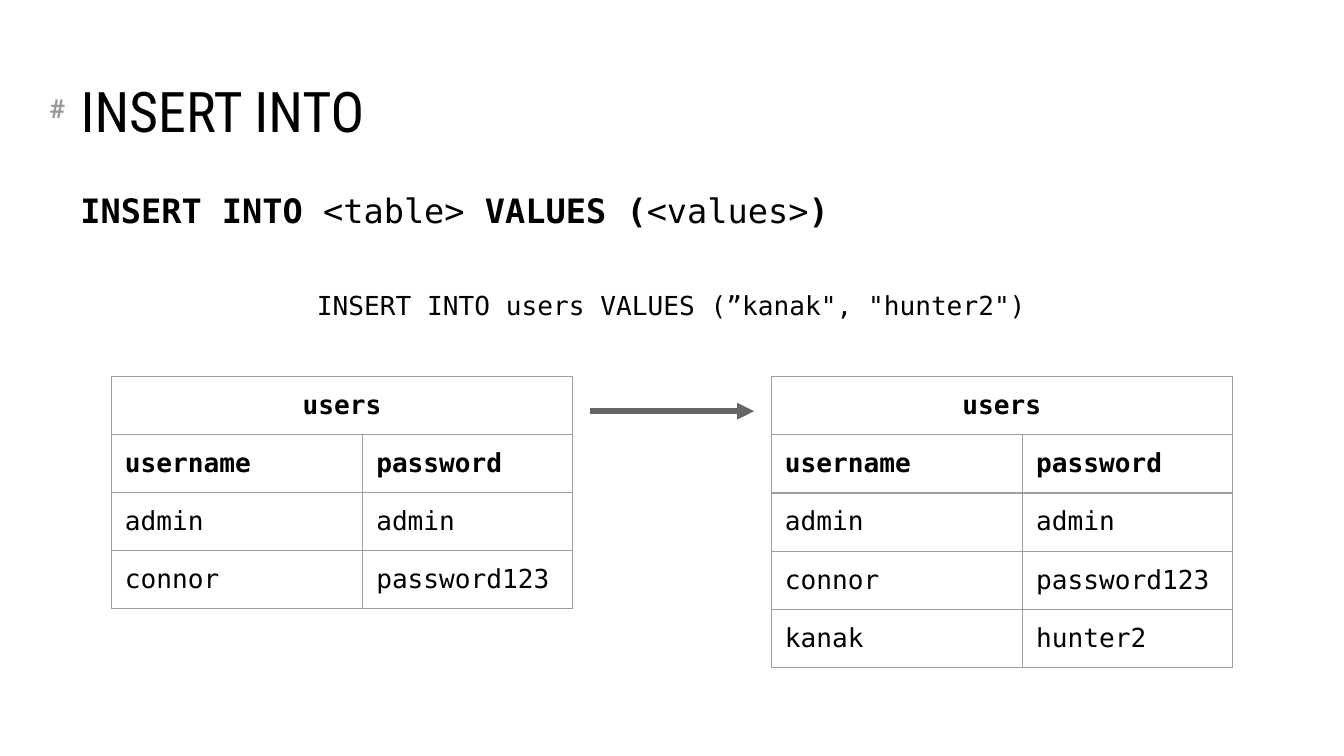
"""Builds a slide explaining the SQL INSERT INTO statement."""
from lxml.etree import SubElement
from pptx import Presentation
from pptx.dml.color import RGBColor
from pptx.enum.shapes import MSO_CONNECTOR
from pptx.enum.text import MSO_ANCHOR, MSO_AUTO_SIZE, PP_ALIGN
from pptx.oxml.ns import qn
from pptx.util import Inches, Pt

BLACK = RGBColor(0x00, 0x00, 0x00)
GRAY = RGBColor(0x99, 0x99, 0x99)
ARROW_GRAY = RGBColor(0x66, 0x66, 0x66)
BORDER_HEX = "9E9E9E"
MONO = "DejaVu Sans Mono"

TITLE = "INSERT INTO"
SYNTAX = [("INSERT INTO", True), (" <table> ", False), ("VALUES (", True),
          ("<values>", False), (")", True)]
EXAMPLE = "INSERT INTO users VALUES (”kanak\", \"hunter2\")"
TABLE_NAME = "users"
COLUMNS = ("username", "password")
ROWS_BEFORE = [("admin", "admin"), ("connor", "password123")]
ROWS_AFTER = ROWS_BEFORE + [("kanak", "hunter2")]

COLUMN_WIDTHS = (1.87, 1.56)
TABLE_TOP = 2.8
TABLES = [(0.83, 1.73, ROWS_BEFORE), (5.74, 2.17, ROWS_AFTER)]


def style(para, size, font=MONO, color=BLACK, bold=None, align=PP_ALIGN.LEFT):
    para.alignment = align
    para.font.name = font
    para.font.size = Pt(size)
    para.font.color.rgb = color
    para.font.bold = bold


def prepare(shape, anchor=MSO_ANCHOR.TOP):
    frame = shape.text_frame
    frame.word_wrap = True
    frame.auto_size = MSO_AUTO_SIZE.NONE
    frame.vertical_anchor = anchor
    frame.margin_left = frame.margin_right = Inches(0.1)
    frame.margin_top = frame.margin_bottom = Inches(0.1)
    return frame.paragraphs[0]


def add_text(page, left, top, width, height, spans):
    box = page.shapes.add_textbox(Inches(left), Inches(top), Inches(width), Inches(height))
    para = prepare(box)
    for text, bold in spans:
        span = para.add_run()
        span.text = text
        span.font.bold = bold
    return para


def add_borders(cell):
    properties = cell._tc.get_or_add_tcPr()
    for position, side in enumerate(("a:lnL", "a:lnR", "a:lnT", "a:lnB")):
        line = SubElement(properties, qn(side), w=str(Pt(0.75)))
        fill = SubElement(line, qn("a:solidFill"))
        SubElement(fill, qn("a:srgbClr"), val=BORDER_HEX)
        properties.insert(position, line)


def add_users_table(page, left, height, records):
    rows = [(TABLE_NAME, ""), COLUMNS] + records
    table = page.shapes.add_table(
        len(rows), len(COLUMNS), Inches(left), Inches(TABLE_TOP),
        Inches(sum(COLUMN_WIDTHS)), Inches(height)).table
    for column, width in zip(table.columns, COLUMN_WIDTHS):
        column.width = Inches(width)
    for r, values in enumerate(rows):
        for c, value in enumerate(values):
            cell = table.cell(r, c)
            cell.text = value
            cell.margin_left = cell.margin_right = Inches(0.1)
            cell.margin_top = cell.margin_bottom = Inches(0.1)
            cell.fill.background()
            add_borders(cell)
            style(cell.text_frame.paragraphs[0], 14, bold=r < 2,
                  align=PP_ALIGN.CENTER if r == 0 else PP_ALIGN.LEFT)
    table.cell(0, 0).merge(table.cell(0, 1))


def add_arrow(page, start, end, y):
    arrow = page.shapes.add_connector(
        MSO_CONNECTOR.STRAIGHT, Inches(start), Inches(y), Inches(end), Inches(y))
    arrow.line.color.rgb = ARROW_GRAY
    arrow.line.width = Pt(3)
    SubElement(arrow.line._get_or_add_ln(), qn("a:tailEnd"), type="triangle")
    SubElement(arrow._element.spPr, qn("a:effectLst"))


def main():
    deck = Presentation()
    deck.slide_width = Inches(10)
    deck.slide_height = deck.slide_width * 9 // 16
    page = deck.slides.add_slide(deck.slide_layouts[5])

    title = page.shapes.title
    title.left, title.top = Inches(0.5), Inches(0.23)
    title.width, title.height = Inches(9), Inches(0.94)
    title.text_frame.text = TITLE
    style(prepare(title, MSO_ANCHOR.BOTTOM), 30, "Roboto Condensed")

    style(add_text(page, 0.27, 0.59, 0.31, 0.47, [("#", True)]), 14, "Roboto", GRAY)
    style(add_text(page, 0.5, 1.31, 9, 4.07, SYNTAX), 18)
    example = add_text(page, 0.5, 2.05, 9, 0.58, [(EXAMPLE, False)])
    style(example, 14, align=PP_ALIGN.CENTER)
    example.space_after = Pt(10)

    for left, height, records in TABLES:
        add_users_table(page, left, height, records)
    add_arrow(page, 4.39, 5.61, 3.06)
    deck.save("out.pptx")


if __name__ == "__main__":
    main()
